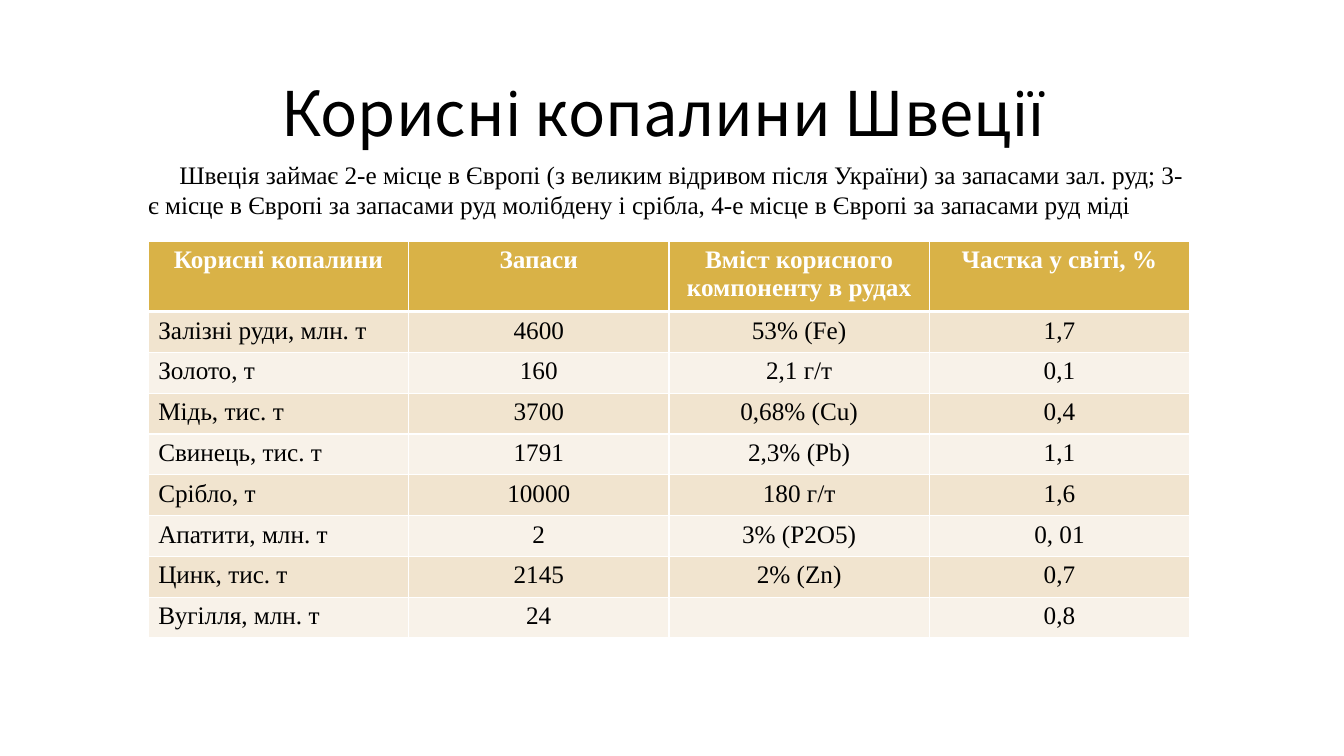
import pptx
import pptx.dml.color
import pptx.enum.text
import pptx.oxml.ns
import pptx.util
from lxml import etree

Inches = pptx.util.Inches
Pt = pptx.util.Pt

TITLE = "Корисні копалини Швеції"
INTRO = ("Швеція займає 2-е місце в Європі (з великим відривом після України) "
         "за запасами зал. руд; 3-є місце в Європі за запасами руд молібдену і срібла, "
         "4-е місце в Європі за запасами руд міді")
HEADER = ("Корисні копалини", "Запаси", "Вміст корисного компоненту в рудах", "Частка у світі, %")
MINERALS = [
    ("Залізні руди, млн. т", "4600", "53% (Fe)", "1,7"),
    ("Золото, т", "160", "2,1 г/т", "0,1"),
    ("Мідь, тис. т", "3700", "0,68% (Cu)", "0,4"),
    ("Свинець, тис. т", "1791", "2,3% (Pb)", "1,1"),
    ("Срібло, т", "10000", "180 г/т", "1,6"),
    ("Апатити, млн. т", "2", "3% (Р2О5)", "0, 01"),
    ("Цинк, тис. т", "2145", "2% (Zn)", "0,7"),
    ("Вугілля, млн. т", "24", "", "0,8"),
]
THEME = {
    "title_font": "Noto Sans CJK KR", "body_font": "Times New Roman",
    "title_size": 44, "body_size": 18,
    "text": "000000", "light": "FFFFFF",
    "header": "D9B247", "bands": ("F1E4CF", "F8F2E9"),
}
TITLE_BOX = (2.69, 0.69, 8.11, 0.84)
INTRO_BOX = (1.37, 1.53, 10.55, 1.01)
TABLE_BOX = (1.47, 2.39, 10.33, 3.94)
HEADER_HEIGHT = 0.7
INTRO_INDENT = 0.31


def color(name):
    return pptx.dml.color.RGBColor.from_string(name)


def add_span(para, text, font, size, tint, bold=False):
    span = para.add_run()
    span.text = text
    span.font.name = font
    span.font.size = Pt(size)
    span.font.bold = bold
    span.font.color.rgb = color(tint)


def add_text(page, place, text, font, size, wrap):
    box = page.shapes.add_textbox(*map(Inches, place))
    frame = box.text_frame
    frame.word_wrap = wrap
    frame.auto_size = pptx.enum.text.MSO_AUTO_SIZE.SHAPE_TO_FIT_TEXT
    para = frame.paragraphs[0]
    add_span(para, text, font, size, THEME["text"])
    return para


def set_borders(cell, bottom):
    """Draw white cell borders, with the bottom one of the given width in points."""
    properties = cell._tc.get_or_add_tcPr()
    qn = pptx.oxml.ns.qn
    for position, (side, width) in enumerate((("L", 1), ("R", 1), ("T", 1), ("B", bottom))):
        line = etree.Element(qn("a:ln" + side), w=str(Pt(width)))
        fill = etree.SubElement(line, qn("a:solidFill"))
        etree.SubElement(fill, qn("a:srgbClr"), val=THEME["light"])
        properties.insert(position, line)


def add_minerals_table(page):
    rows = [HEADER] + MINERALS
    table = page.shapes.add_table(len(rows), len(HEADER), *map(Inches, TABLE_BOX)).table
    width, height = TABLE_BOX[2:]
    for column in table.columns:
        column.width = Inches(width / len(HEADER))
    for r, values in enumerate(rows):
        is_header = r == 0
        row_height = HEADER_HEIGHT if is_header else (height - HEADER_HEIGHT) / len(MINERALS)
        table.rows[r].height = Inches(row_height)
        for c, value in enumerate(values):
            cell = table.cell(r, c)
            cell.fill.solid()
            cell.fill.fore_color.rgb = color(THEME["header"] if is_header else THEME["bands"][(r - 1) % 2])
            set_borders(cell, 3 if is_header else 1)
            para = cell.text_frame.paragraphs[0]
            if is_header or c > 0:
                para.alignment = pptx.enum.text.PP_ALIGN.CENTER
            if value:
                add_span(para, value, THEME["body_font"], THEME["body_size"],
                         THEME["light"] if is_header else THEME["text"], is_header)


def main():
    deck = pptx.Presentation()
    deck.slide_width, deck.slide_height = Inches(13.33), Inches(7.5)
    page = deck.slides.add_slide(deck.slide_layouts[6])
    add_text(page, TITLE_BOX, TITLE, THEME["title_font"], THEME["title_size"], wrap=False)
    intro = add_text(page, INTRO_BOX, INTRO, THEME["body_font"], THEME["body_size"], wrap=True)
    intro._p.get_or_add_pPr().set("indent", str(Inches(INTRO_INDENT)))
    add_minerals_table(page)
    deck.save("out.pptx")


if __name__ == "__main__":
    main()
